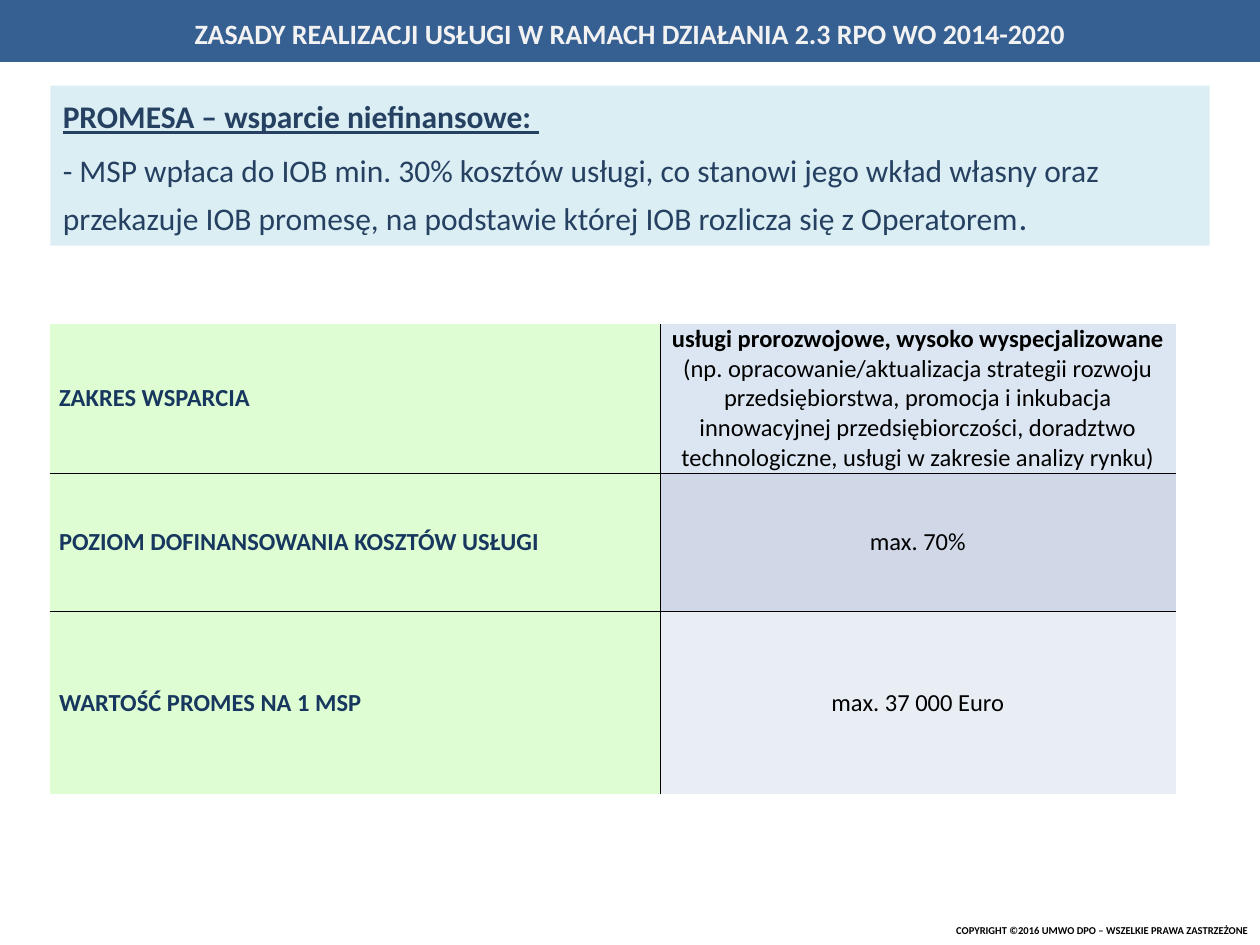
"""Build a slide on the rules of non-financial support for small firms."""
from dataclasses import dataclass

from lxml import etree
from pptx import Presentation, util as u
from pptx.dml.color import RGBColor
from pptx.enum import shapes, text
from pptx.oxml.ns import qn


@dataclass(frozen=True)
class Theme:
    font: str = "Calibri"
    banner: str = "376092"
    banner_text: str = "F2F2F2"
    panel: str = "DBEEF4"
    panel_text: str = "254061"
    label: str = "DEFDD3"
    label_text: str = "17375E"
    black: str = "000000"
    title_size: int = 16
    panel_size: int = 18
    stop_size: int = 20
    table_size: int = 14
    footer_size: int = 6
    border: float = 0.5


THEME = Theme()
WIDTH, HEIGHT = 10, 7.5
MARGIN = 0.04 * WIDTH
ALIGN, ANCHOR = text.PP_ALIGN, text.MSO_ANCHOR

TITLE = "ZASADY REALIZACJI USŁUGI W RAMACH DZIAŁANIA 2.3 RPO WO 2014-2020"
PROMISE_HEADING = "PROMESA – wsparcie niefinansowe: "
PROMISE_BODY = (
    "- MSP wpłaca do IOB min. 30% kosztów usługi, co stanowi jego wkład własny oraz "
    "przekazuje IOB promesę, na podstawie której IOB rozlicza się z Operatorem"
)
FOOTER = "COPYRIGHT ©2016 UMWO DPO – WSZELKIE PRAWA ZASTRZEŻONE"
COLUMNS = (4.84, 4.09)
ROWS = (
    ("ZAKRES WSPARCIA", ALIGN.LEFT, "DCE6F2", 1.17, 0, (
        ("usługi prorozwojowe, wysoko wyspecjalizowane ", True),
        ("(np. opracowanie/aktualizacja strategii rozwoju przedsiębiorstwa, "
         "promocja i inkubacja innowacyjnej przedsiębiorczości, doradztwo "
         "technologiczne, usługi w zakresie analizy rynku)", False))),
    ("POZIOM DOFINANSOWANIA KOSZTÓW USŁUGI", ALIGN.JUSTIFY, "D0D8E8", 1.1, 3,
     (("max. 70%", False),)),
    ("WARTOŚĆ PROMES NA 1 MSP", ALIGN.JUSTIFY, "E9EDF4", 1.45, 0,
     (("max. 37 000 Euro", False),)),
)


def add_run(paragraph, words, size, color, bold=False, underline=False):
    run = paragraph.add_run()
    run.text = words
    font = run.font
    font.name, font.size = THEME.font, u.Pt(size)
    font.bold, font.underline = bold, underline
    font.color.rgb = RGBColor.from_string(color)


def paint(item, color):
    item.fill.solid()
    item.fill.fore_color.rgb = RGBColor.from_string(color)


def add_block(slide, preset, box, color):
    shape = slide.shapes.add_shape(preset, *map(u.Inches, box))
    shape.shadow.inherit = False
    paint(shape, color)
    shape.line.fill.background()
    shape.text_frame.word_wrap = True
    return shape


def add_promise(slide):
    box = (MARGIN, 0.68, WIDTH - 2 * MARGIN, 1.27)
    frame = add_block(slide, shapes.MSO_SHAPE.RECTANGLE, box, THEME.panel).text_frame
    frame.vertical_anchor = ANCHOR.TOP
    heading, body = frame.paragraphs[0], frame.add_paragraph()
    for paragraph in (heading, body):
        paragraph.alignment = ALIGN.LEFT
        paragraph.line_spacing = 1.15
        paragraph.space_before = u.Pt(6)
    add_run(heading, PROMISE_HEADING, THEME.panel_size, THEME.panel_text, True, True)
    add_run(body, PROMISE_BODY, THEME.panel_size, THEME.panel_text)
    add_run(body, ".", THEME.stop_size, THEME.panel_text)


def add_border(cell, side, visible):
    line = etree.SubElement(cell._tc.get_or_add_tcPr(), qn(f"a:ln{side}"),
                            w=str(u.Pt(THEME.border)))
    if visible:
        fill = etree.SubElement(line, qn("a:solidFill"))
        etree.SubElement(fill, qn("a:srgbClr"), val=THEME.black)
    else:
        etree.SubElement(line, qn("a:noFill"))


def fill_cell(cell, color, alignment, space_after, runs):
    cell.margin_left = cell.margin_right = u.Inches(0.07)
    cell.margin_top = cell.margin_bottom = 0
    cell.vertical_anchor = ANCHOR.MIDDLE
    paint(cell, color)
    paragraph = cell.text_frame.paragraphs[0]
    paragraph.alignment = alignment
    paragraph.space_after = u.Pt(space_after)
    for words, font_color, bold in runs:
        add_run(paragraph, words, THEME.table_size, font_color, bold)


def add_support_table(slide):
    heights = [row[3] for row in ROWS]
    box = (MARGIN, 2.57, sum(COLUMNS), sum(heights))
    table = slide.shapes.add_table(len(ROWS), len(COLUMNS), *map(u.Inches, box)).table
    table.first_row = table.horz_banding = False
    for column, width in zip(table.columns, COLUMNS):
        column.width = u.Inches(width)
    for index, (label, alignment, color, height, after, values) in enumerate(ROWS):
        table.rows[index].height = u.Inches(height)
        left, right = table.cell(index, 0), table.cell(index, 1)
        for cell in (left, right):
            inner = {"L": cell is right, "R": cell is left,
                     "T": index > 0, "B": index < len(ROWS) - 1}
            for side, visible in inner.items():
                add_border(cell, side, visible)
        fill_cell(left, THEME.label, alignment, 3, [(label, THEME.label_text, True)])
        fill_cell(right, color, ALIGN.CENTER, after,
                  [(words, THEME.black, bold) for words, bold in values])


def add_footer(slide):
    width, height = 3.44, 0.2
    box = (WIDTH - width, 7.28, width, height)
    frame = slide.shapes.add_textbox(*map(u.Inches, box)).text_frame
    frame.word_wrap = True
    frame.vertical_anchor = ANCHOR.MIDDLE
    paragraph = frame.paragraphs[0]
    paragraph.alignment = ALIGN.RIGHT
    add_run(paragraph, FOOTER, THEME.footer_size, THEME.black, True)


def add_banner(slide):
    shape = add_block(slide, shapes.MSO_SHAPE.PARALLELOGRAM, (0, 0, WIDTH, 0.49), THEME.banner)
    shape.adjustments[0] = 0
    frame = shape.text_frame
    frame.margin_left = frame.margin_right = 0
    frame.vertical_anchor = ANCHOR.MIDDLE
    paragraph = frame.paragraphs[0]
    paragraph.alignment = ALIGN.CENTER
    paragraph.line_spacing = 1.15
    add_run(paragraph, TITLE, THEME.title_size, THEME.banner_text, True)


def main():
    presentation = Presentation()
    presentation.slide_width, presentation.slide_height = u.Inches(WIDTH), u.Inches(HEIGHT)
    slide = presentation.slides.add_slide(presentation.slide_layouts[6])
    for build in (add_promise, add_support_table, add_footer, add_banner):
        build(slide)
    presentation.save("out.pptx")


if __name__ == "__main__":
    main()
